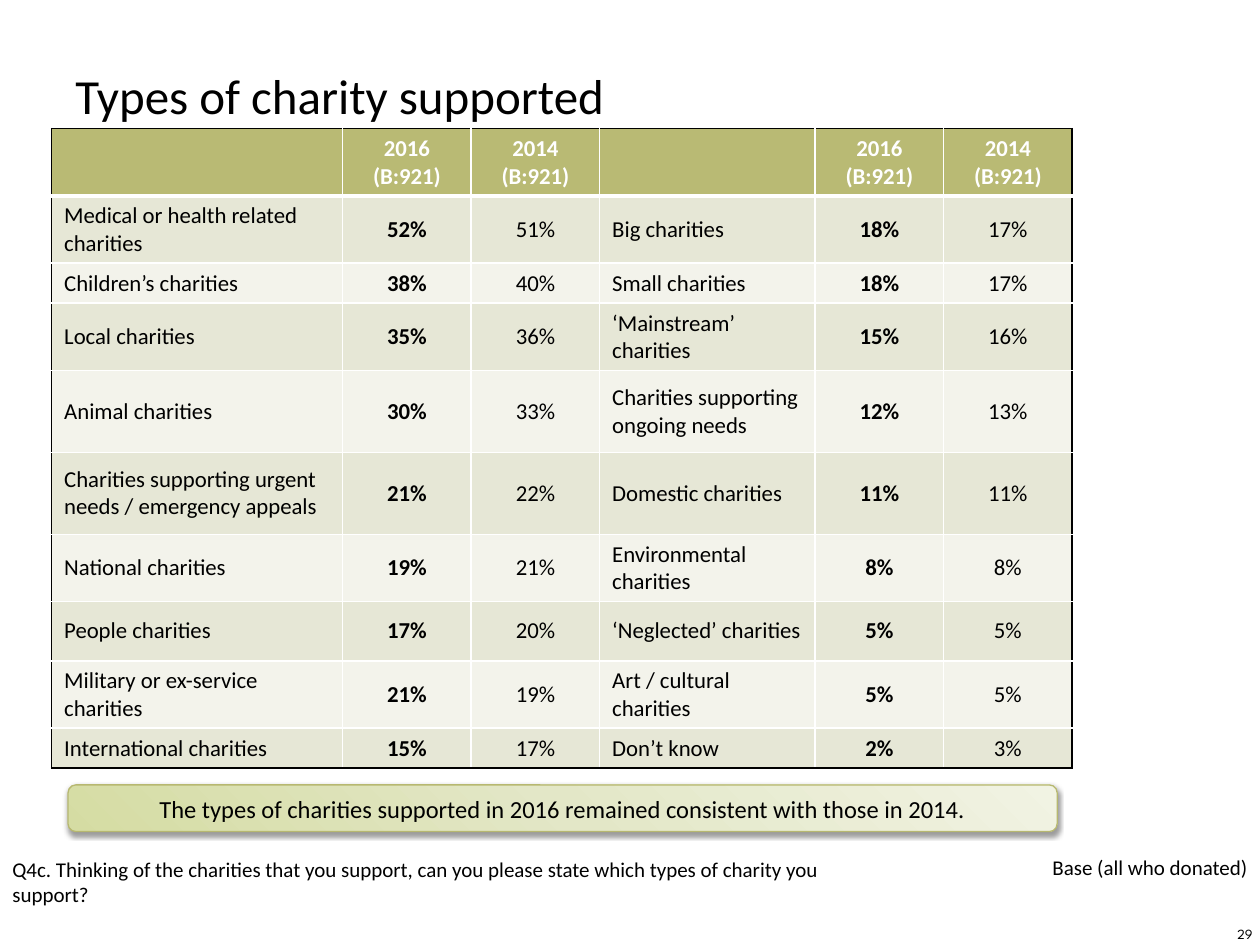
import pptx
import pptx.dml.color
import pptx.enum.shapes
import pptx.enum.text
import pptx.oxml
import pptx.oxml.ns
import pptx.util
from lxml import etree

Inches, Pt = pptx.util.Inches, pptx.util.Pt
ALIGN, ANCHOR = pptx.enum.text.PP_ALIGN, pptx.enum.text.MSO_ANCHOR
qn = pptx.oxml.ns.qn

COLORS = {
    "text": "000000", "white": "FFFFFF", "header": "B9BA74",
    "band_dark": "E6E7D6", "band_light": "F3F3EB", "callout_line": "B7B870",
}
CALLOUT_GRADIENT = [(0, "D5DCA3"), (50, "E3E7C7"), (100, "F1F3E3")]

HEADER = ["", "2016 (B:921)", "2014 (B:921)"] * 2
CHARITIES = [
    ("Medical or health related charities", "52%", "51%", "Big charities", "18%", "17%"),
    ("Children’s charities", "38%", "40%", "Small charities", "18%", "17%"),
    ("Local charities", "35%", "36%", "‘Mainstream’ charities", "15%", "16%"),
    ("Animal charities", "30%", "33%", "Charities supporting ongoing needs", "12%", "13%"),
    ("Charities supporting urgent needs / emergency appeals", "21%", "22%",
     "Domestic charities", "11%", "11%"),
    ("National charities", "19%", "21%", "Environmental charities", "8%", "8%"),
    ("People charities", "17%", "20%", "‘Neglected’ charities", "5%", "5%"),
    ("Military or ex-service charities", "21%", "19%", "Art / cultural charities", "5%", "5%"),
    ("International charities", "15%", "17%", "Don’t know", "2%", "3%"),
]
COL_WIDTHS = [2.31, 1.02, 1.02, 1.71, 1.02, 1.02]
ROW_HEIGHTS = [0.46, 0.46, 0.28, 0.47, 0.65, 0.65, 0.47, 0.47, 0.47, 0.28]
TABLE_BOX = (0.41, 1.02, 8.11, 5.09)

CALLOUT = "The types of charities supported in 2016 remained consistent with those in 2014."
CALLOUT_BOX = (0.54, 6.23, 7.85, 0.37)

# text, box, alignment, anchor, font
TEXTS = [
    ("Types of charity supported", (0.5, 0.13, 7.31, 1.25), ALIGN.LEFT, ANCHOR.MIDDLE,
     {"size": Pt(28), "name": "Calibri"}),
    ("29", (7.71, 7.21, 2.33, 0.4), ALIGN.RIGHT, ANCHOR.MIDDLE,
     {"size": Pt(8), "name": "League Spartan"}),
    ("Q4c. Thinking of the charities that you support, can you please state which types "
     "of charity you support?", (0, 6.75, 7.09, 0.5), ALIGN.LEFT, ANCHOR.TOP,
     {"size": Pt(12), "name": "Calibri"}),
    ("Base (all who donated)", (1.49, 6.73, 8.51, 0.3), ALIGN.RIGHT, ANCHOR.TOP,
     {"size": Pt(12), "name": "Calibri"}),
]


def rgb(name):
    return pptx.dml.color.RGBColor.from_string(COLORS[name])


def write(tf, text, align, font, color="text"):
    p = tf.paragraphs[0]
    p.alignment = align
    if not text:
        return
    r = p.add_run()
    r.text = text
    for key, value in font.items():
        setattr(r.font, key, value)
    r.font.color.rgb = rgb(color)


def add_text(slide, text, box, align, anchor, font):
    tf = slide.shapes.add_textbox(*map(Inches, box)).text_frame
    tf.word_wrap = True
    tf.vertical_anchor = anchor
    write(tf, text, align, font)


def set_borders(cell, borders):
    """borders: (side, colour name, points) for sides L, R, T, B in that order."""
    tcPr = cell._tc.get_or_add_tcPr()
    for i, (side, color, points) in enumerate(borders):
        ln = etree.Element(qn("a:ln" + side), w=str(Pt(points)))
        fill = etree.SubElement(ln, qn("a:solidFill"))
        etree.SubElement(fill, qn("a:srgbClr"), val=COLORS[color])
        tcPr.insert(i, ln)


def add_charity_table(slide):
    rows = [HEADER, *CHARITIES]
    last_row, last_col = len(rows) - 1, len(HEADER) - 1
    frame = slide.shapes.add_table(len(rows), len(HEADER), *map(Inches, TABLE_BOX))
    table = frame.table
    for col, width in zip(table.columns, COL_WIDTHS):
        col.width = Inches(width)
    for row, height in zip(table.rows, ROW_HEIGHTS):
        row.height = Inches(height)
    frame.height = Inches(TABLE_BOX[3])

    for i, row in enumerate(rows):
        band = "header" if i == 0 else "band_dark" if i % 2 else "band_light"
        for j, text in enumerate(row):
            cell = table.cell(i, j)
            cell.fill.solid()
            cell.fill.fore_color.rgb = rgb(band)
            cell.vertical_anchor = ANCHOR.TOP if i == 0 else ANCHOR.MIDDLE
            font = {"size": Pt(13), "name": "Calibri", "bold": i == 0 or j % 3 == 1}
            write(cell.text_frame, text, ALIGN.CENTER if j % 3 else ALIGN.LEFT, font,
                  "text" if i else "white")
            set_borders(cell, [
                ("L", "white" if j else "text", 1),
                ("R", "text" if j == last_col else "white", 1),
                ("T", "white" if i else "text", 3 if i == 1 else 1),
                ("B", "text" if i == last_row else "white", 1 if i else 3),
            ])


def add_callout(slide):
    s = slide.shapes.add_shape(pptx.enum.shapes.MSO_SHAPE.ROUNDED_RECTANGLE,
                               *map(Inches, CALLOUT_BOX))
    s.fill.gradient()
    s.fill.gradient_angle = 45
    stops = s._element.spPr.find(".//" + qn("a:gsLst"))
    for stop in list(stops):
        stops.remove(stop)
    for percent, color in CALLOUT_GRADIENT:
        stop = etree.SubElement(stops, qn("a:gs"), pos=str(percent * 1000))
        etree.SubElement(stop, qn("a:srgbClr"), val=color)
    s.line.color.rgb = rgb("callout_line")
    s.line.width = Pt(0.75)

    s.shadow.inherit = False
    effects = s._element.spPr.find(qn("a:effectLst"))
    shadow = etree.SubElement(effects, qn("a:outerShdw"), blurRad=str(Pt(3.1)),
                              dist=str(Pt(1.6)), dir=str(90 * 60000), rotWithShape="0")
    color = etree.SubElement(shadow, qn("a:srgbClr"), val=COLORS["text"])
    etree.SubElement(color, qn("a:alpha"), val="38000")

    s.text_frame.word_wrap = True
    s.text_frame.vertical_anchor = ANCHOR.MIDDLE
    write(s.text_frame, CALLOUT, ALIGN.CENTER, {"size": Pt(14), "name": "Calibri"})


def main():
    prs = pptx.Presentation()
    prs.slide_width, prs.slide_height = Inches(10), Inches(7.5)
    slide = prs.slides.add_slide(prs.slide_layouts[6])
    title, *notes = TEXTS
    add_text(slide, *title)
    add_charity_table(slide)
    for note in notes:
        add_text(slide, *note)
    add_callout(slide)
    prs.save("out.pptx")


if __name__ == "__main__":
    main()
